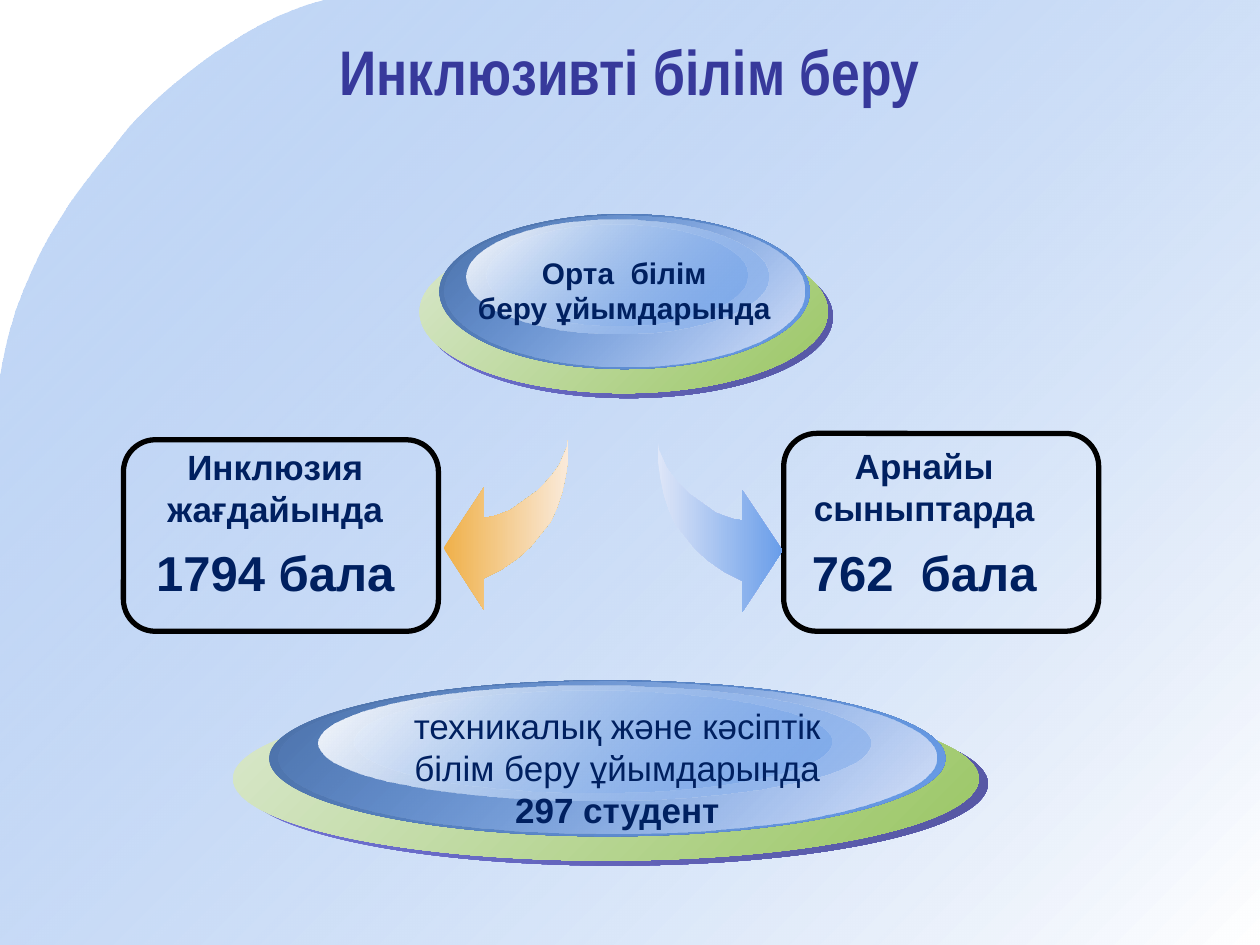
import pptx
import pptx.dml.color
import pptx.enum.shapes
import pptx.enum.text
import pptx.oxml
import pptx.oxml.ns
import pptx.util

Inches = pptx.util.Inches
SHAPE = pptx.enum.shapes.MSO_SHAPE
ANCHOR = pptx.enum.text.MSO_ANCHOR
NAVY = "002060"

# Corner curve: start point, then cubic segments (two controls and an end)
CORNER_START = (2.58, 0)
CORNER_CURVES = [
    ((1.9, 0.16), (1.16, 0.83), (0.98, 1.07)),
    ((0.8, 1.32), (0.16, 1.94), (0, 3.01)),
]

# Arrow outline as (distance from tail, drop below tail)
ARROW_OUTLINE = [
    (0, 0), (0, 0.15), (0.02, 0.29), (0.05, 0.43), (0.09, 0.55), (0.14, 0.66),
    (0.22, 0.76), (0.3, 0.86), (0.4, 0.95), (0.53, 1.04), (0.67, 1.11),
    (0.67, 1.36), (0.99, 0.87), (0.67, 0.39), (0.67, 0.63), (0.6, 0.62),
    (0.54, 0.6), (0.46, 0.57), (0.39, 0.52), (0.32, 0.47), (0.25, 0.42),
    (0.18, 0.35), (0.12, 0.28), (0.07, 0.21), (0.04, 0.14), (0.01, 0.07),
]

# Disc layers, back to front: left, top, width, height in percent of the disc,
# then the two gradient colours with their opacity
DISC_LAYERS = [
    (1.2, 11.6, 98.8, 88.4, ("7476DC", 100), ("5556A1", 100)),
    (0, 8.9, 98.8, 88.4, ("DAE8CD", 100), ("9AC664", 100)),
    (4.8, 0, 89.6, 84.2, ("4B70A7", 100), ("699DE9", 100)),
    (6, 0.7, 87.2, 82.2, ("699DE9", 0), ("DAE3F8", 100)),
    (16.1, 5.5, 63.2, 54.8, ("5F8ED3", 100), ("699DE9", 48)),
    (11.3, 2.7, 73.2, 62.3, ("FFFFFF", 100), ("699DE9", 38)),
]


def color(hex_value):
    return pptx.dml.color.RGBColor.from_string(hex_value)


def fill_gradient(shape, start, end, angle):
    """Fill with two (colour, opacity percent) stops and drop line and shadow."""
    shape.shadow.inherit = False
    shape.line.fill.background()
    shape.fill.gradient()
    shape.fill.gradient_angle = angle
    for stop, (hex_value, _) in zip(shape.fill.gradient_stops, (start, end)):
        stop.color.rgb = color(hex_value)
    stop_colors = shape._element.spPr.iter(pptx.oxml.ns.qn("a:srgbClr"))
    for stop_color, (_, opacity) in zip(list(stop_colors), (start, end)):
        if opacity < 100:
            alpha = pptx.oxml.parse_xml(
                f'<a:alpha {pptx.oxml.ns.nsdecls("a")} val="{opacity * 1000}"/>')
            stop_color.append(alpha)


def add_outline(slide, points):
    corners = [(Inches(x), Inches(y)) for x, y in points]
    builder = slide.shapes.build_freeform(*corners[0])
    builder.add_line_segments(corners[1:], close=True)
    return builder.convert_to_shape()


def curve_points(start, curves, steps=16):
    points = [start]
    for control_1, control_2, end in curves:
        begin = points[-1]
        for step in range(1, steps + 1):
            t = step / steps
            weights = ((1 - t) ** 3, 3 * t * (1 - t) ** 2, 3 * t ** 2 * (1 - t), t ** 3)
            knots = (begin, control_1, control_2, end)
            points.append(tuple(
                sum(w * knot[axis] for w, knot in zip(weights, knots))
                for axis in (0, 1)))
    return points


def add_text(slide, box, paragraphs, wrap=True, anchor=ANCHOR.TOP,
             font="Arial", hex_value=NAVY):
    """Each paragraph is (space before in points, [(text, size, bold), ...])."""
    frame = slide.shapes.add_textbox(*map(Inches, box)).text_frame
    frame.word_wrap = wrap
    frame.vertical_anchor = anchor
    for index, (space_before, runs) in enumerate(paragraphs):
        paragraph = frame.add_paragraph() if index else frame.paragraphs[0]
        paragraph.alignment = pptx.enum.text.PP_ALIGN.CENTER
        if space_before:
            paragraph.space_before = pptx.util.Pt(space_before)
        for text, size, bold in runs:
            run = paragraph.add_run()
            run.text = text
            run.font.name = font
            run.font.size = pptx.util.Pt(size)
            run.font.bold = bold
            run.font.color.rgb = color(hex_value)


def add_backdrop(slide, width, height):
    points = curve_points(CORNER_START, CORNER_CURVES)
    points += [(0, height), (width, height), (width, 0)]
    fill_gradient(add_outline(slide, points), ("699DE9", 39), ("FFFFFF", 100), 315)


def add_disc(slide, box):
    left, top, width, height = box
    for x, y, w, h, start, end in DISC_LAYERS:
        layer = slide.shapes.add_shape(
            SHAPE.OVAL,
            Inches(left + width * x / 100), Inches(top + height * y / 100),
            Inches(width * w / 100), Inches(height * h / 100))
        fill_gradient(layer, start, end, 315)


def add_curved_arrow(slide, tail, direction, start, end):
    """Direction is -1 for an arrow to the left and 1 for one to the right."""
    points = [(tail[0] + direction * x, tail[1] + y) for x, y in ARROW_OUTLINE]
    fill_gradient(add_outline(slide, points), (start, 100), (end, 100), 0)


def add_count_card(slide, box, text_offset, heading, count, gap):
    left, top, _, _ = box
    frame = slide.shapes.add_shape(SHAPE.ROUNDED_RECTANGLE, *map(Inches, box))
    frame.shadow.inherit = False
    frame.fill.background()
    frame.line.color.rgb = color("000000")
    frame.line.width = pptx.util.Pt(3)
    dx, dy = text_offset
    add_text(slide, (left + dx, top + dy, 2.23, 1.38),
             [(0, [(heading, 20, True)]), (gap, [(count, 28, True)])])


def main():
    presentation = pptx.Presentation()
    presentation.slide_width = Inches(10)
    presentation.slide_height = Inches(7.5)
    slide = presentation.slides.add_slide(presentation.slide_layouts[6])

    add_backdrop(slide, 10, 7.5)
    add_text(slide, (0.5, 0.25, 9, 0.62),
             [(0, [("Инклюзивті білім беру", 36, True)])],
             anchor=ANCHOR.MIDDLE, font="Arial Narrow", hex_value="37399B")

    add_count_card(slide, (0.98, 3.49, 2.5, 1.52), (0.09, 0),
                   "Инклюзия жағдайында", "1794 бала", 7)
    add_count_card(slide, (6.22, 3.44, 2.5, 1.57), (0, 0.04),
                   "Арнайы сыныптарда", "762  бала", 8)
    add_curved_arrow(slide, (4.51, 3.48), -1, "EFB049", "FAEADA")
    add_curved_arrow(slide, (5.22, 3.5), 1, "DEE6F8", "699DE9")

    add_disc(slide, (3.33, 1.7, 3.28, 1.46))
    add_text(slide, (3.65, 1.97, 2.61, 0.67),
             [(0, [("Орта  білім", 17, True)]),
              (0, [("беру ұйымдарында", 17, True)])], wrap=False)

    add_disc(slide, (1.85, 5.4, 5.99, 1.47))
    add_text(slide, (2.93, 5.54, 3.94, 1.11),
             [(0, [("техникалық және кәсіптік білім беру ұйымдарында ", 20, False),
                   ("297 студент", 20, True)])])

    presentation.save("out.pptx")


if __name__ == "__main__":
    main()
